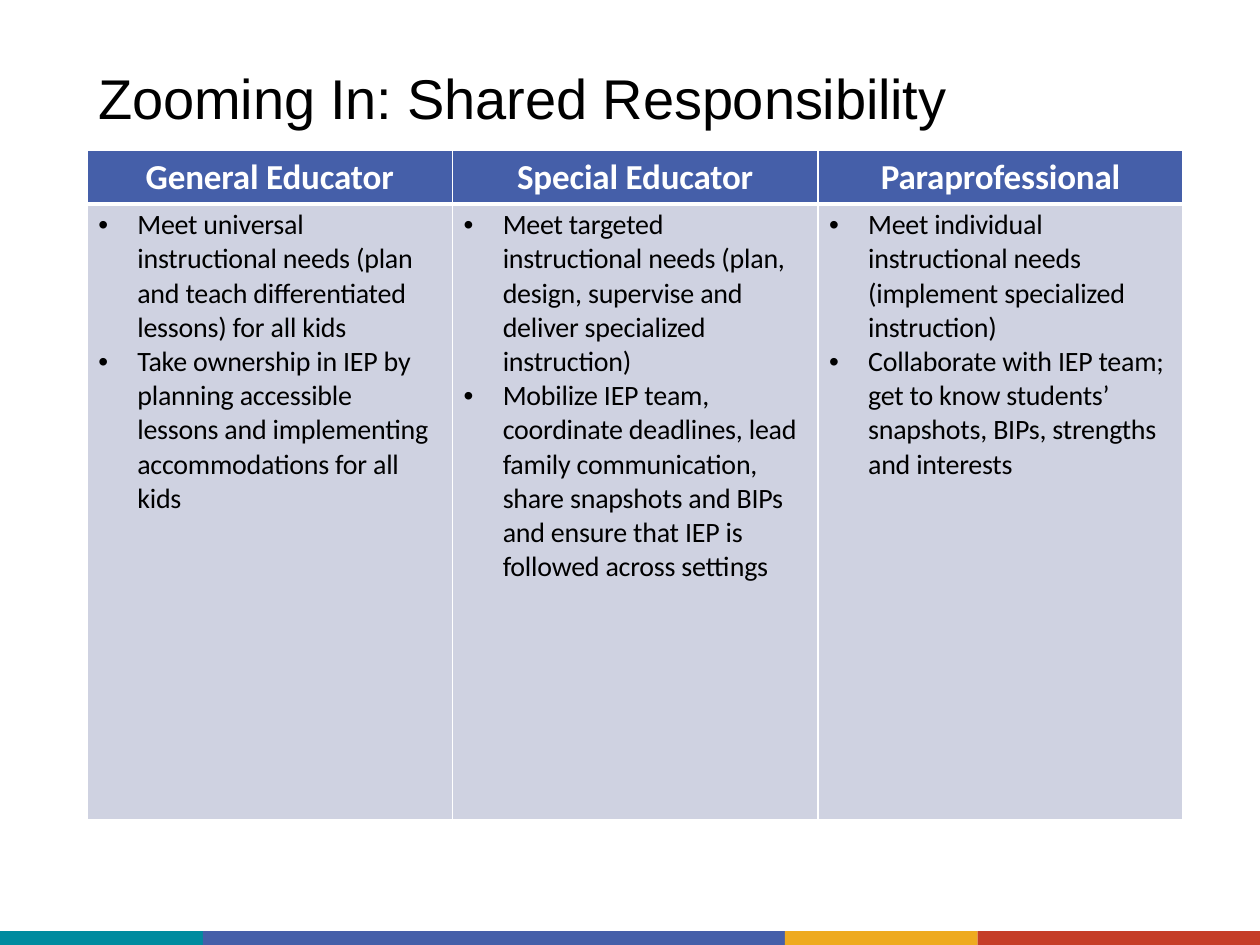
from dataclasses import dataclass

from lxml import etree
from pptx import Presentation
from pptx.dml.color import RGBColor
from pptx.enum.shapes import MSO_SHAPE
from pptx.enum.text import MSO_ANCHOR, MSO_AUTO_SIZE, PP_ALIGN
from pptx.oxml.ns import qn
from pptx.util import Inches, Pt

RECT = MSO_SHAPE.RECTANGLE
TOP, LOW = MSO_ANCHOR.TOP, MSO_ANCHOR.BOTTOM
LEFT, MID = PP_ALIGN.LEFT, PP_ALIGN.CENTER
FIXED = MSO_AUTO_SIZE.NONE


@dataclass(frozen=True)
class Theme:
    blue: str = "455FA9"
    teal: str = "008B9F"
    gold: str = "EEAA1F"
    red: str = "C53E28"
    pale: str = "CFD2E1"
    white: str = "FFFFFF"
    black: str = "000000"
    head: str = "Arial"
    body: str = "Calibri"
    title: int = 32
    label: int = 20
    text: int = 16


class Deck:
    def __init__(self, theme):
        self.theme = theme
        self.show = Presentation()
        self.show.slide_width = Inches(10)
        self.show.slide_height = Inches(7.5)
        self.slide = self.show.slides.add_slide(self.show.slide_layouts[5])

    def style(self, para, face, size, color, bold=False):
        for run in para.runs:
            font = run.font
            font.name, font.size, font.bold = face, Pt(size), bold
            font.color.rgb = RGBColor.from_string(color)
            run._r.get_or_add_rPr().set("spc", "-10")

    def title(self, text, left, top, width, height):
        box = self.slide.shapes.title
        box.left, box.top = Inches(left), Inches(top)
        box.width, box.height = Inches(width), Inches(height)
        frame = box.text_frame
        frame.text = text
        frame.auto_size, frame.vertical_anchor = FIXED, LOW
        frame.margin_left = frame.margin_right = 0
        frame.margin_top = frame.margin_bottom = 0
        para = frame.paragraphs[0]
        para.alignment = LEFT
        self.style(para, self.theme.head, self.theme.title, self.theme.black)

    def strip(self, bands, top, height):
        left = 0
        for width, color in bands:
            band = self.slide.shapes.add_shape(
                RECT, Inches(left), Inches(top), Inches(width), Inches(height))
            band.shadow.inherit = False
            band.fill.solid()
            band.fill.fore_color.rgb = RGBColor.from_string(color)
            band.line.fill.background()
            left += width

    def edge(self, cell, tag, width):
        line = etree.SubElement(cell._tc.get_or_add_tcPr(), qn("a:" + tag),
                                w=str(Pt(width)))
        fill = etree.SubElement(line, qn("a:solidFill"))
        etree.SubElement(fill, qn("a:srgbClr"), val=self.theme.white)

    def cell(self, cell, text, color, top, right, rule):
        for tag in ("lnL", "lnR", "lnT", "lnB"):
            self.edge(cell, tag, 3 if tag == rule else 1)
        cell.fill.solid()
        cell.fill.fore_color.rgb = RGBColor.from_string(color)
        cell.vertical_anchor = TOP
        cell.margin_left = cell.margin_bottom = 0
        cell.margin_top, cell.margin_right = Inches(top), Inches(right)
        cell.text_frame.text = text
        return cell.text_frame.paragraphs

    def bullet(self, para):
        props = para._p.get_or_add_pPr()
        props.set("marL", str(Inches(0.4)))
        props.set("indent", str(-Inches(0.31)))
        etree.SubElement(props, qn("a:buFont"), typeface=self.theme.head)
        etree.SubElement(props, qn("a:buChar"), char="•")

    def table(self, roles, left, top, width, heights):
        look = self.theme
        grid = self.slide.shapes.add_table(
            2, len(roles), Inches(left), Inches(top),
            Inches(width * len(roles)), Inches(sum(heights))).table
        for row, height in zip(grid.rows, heights):
            row.height = Inches(height)
        for col, (role, tasks) in enumerate(roles.items()):
            grid.columns[col].width = Inches(width)
            for para in self.cell(grid.cell(0, col), role, look.blue,
                                  0.05, 0, "lnB"):
                para.alignment = MID
                self.style(para, look.body, look.label, look.white, True)
            for para in self.cell(grid.cell(1, col), "\n".join(tasks),
                                  look.pale, 0.03, 0.14, "lnT"):
                self.bullet(para)
                self.style(para, look.body, look.text, look.black)


def main():
    look = Theme()
    deck = Deck(look)
    deck.strip([(1.61, look.teal), (4.62, look.blue),
                (1.53, look.gold), (2.24, look.red)], 7.39, 0.11)
    deck.title("Zooming In: Shared Responsibility", 0.78, 0.49, 6.79, 0.55)
    roles = {
        "General Educator": [
            "Meet universal instructional needs (plan and teach "
            "differentiated lessons) for all kids",
            "Take ownership in IEP by planning accessible lessons and "
            "implementing accommodations for all kids",
        ],
        "Special Educator": [
            "Meet targeted instructional needs (plan, design, supervise "
            "and deliver specialized instruction)",
            "Mobilize IEP team, coordinate deadlines, lead family "
            "communication, share snapshots and BIPs and ensure that IEP "
            "is followed across settings",
        ],
        "Paraprofessional": [
            "Meet individual instructional needs (implement specialized "
            "instruction)",
            "Collaborate with IEP team; get to know students’ snapshots, "
            "BIPs, strengths and interests",
        ],
    }
    deck.table(roles, 0.69, 1.19, 2.9, (0.43, 4.89))
    deck.show.save("out.pptx")


if __name__ == "__main__":
    main()
